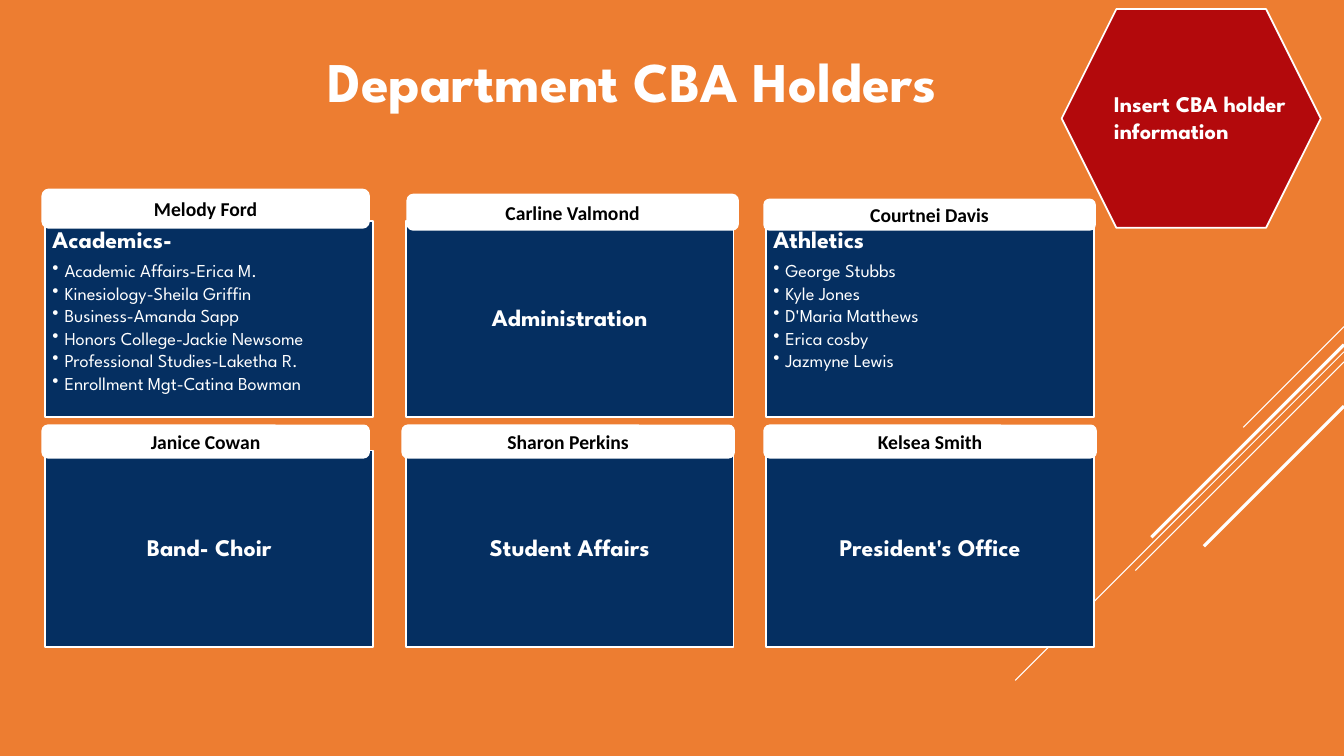
from dataclasses import dataclass

from lxml.etree import SubElement
from pptx import Presentation
from pptx.dml.color import RGBColor
from pptx.enum.shapes import MSO_CONNECTOR as Connector, MSO_SHAPE as Shape
from pptx.enum.text import MSO_ANCHOR as Anchor, MSO_AUTO_SIZE as AutoSize, PP_ALIGN as Align
from pptx.oxml.ns import qn
from pptx.util import Inches, Pt


@dataclass(frozen=True)
class Theme:
    orange: RGBColor = RGBColor.from_string("ED7D31")
    navy: RGBColor = RGBColor.from_string("052F61")
    red: RGBColor = RGBColor.from_string("B3090C")
    white: RGBColor = RGBColor.from_string("FFFFFF")
    black: RGBColor = RGBColor.from_string("000000")
    display: str = "League Spartan"
    label: str = "Calibri"
    title_size: int = 40
    department_size: int = 17
    note_size: int = 16
    holder_size: int = 14
    member_size: int = 13
    outline: float = 1.25


THEME = Theme()
SLIDE_WIDTH, SLIDE_HEIGHT = 13.33, 7.5
COLUMNS = 3
CARD_LEFT, CARD_TOP, CARD_WIDTH, CARD_HEIGHT = 0.45, 2.19, 3.25, 1.95
COLUMN_STEP, ROW_STEP = 3.575, 2.28

DEPARTMENTS = [
    ("Academics-", [
        "Academic Affairs-Erica M.",
        "Kinesiology-Sheila Griffin",
        "Business-Amanda Sapp",
        "Honors College-Jackie Newsome",
        "Professional Studies-Laketha R.",
        "Enrollment Mgt-Catina Bowman",
    ]),
    ("Administration", []),
    ("Athletics", [
        "George Stubbs",
        "Kyle Jones",
        "D'Maria Matthews",
        "Erica cosby",
        "Jazmyne Lewis",
    ]),
    ("Band- Choir", []),
    ("Student Affairs", []),
    ("President's Office", []),
]

HOLDERS = [
    ("Melody Ford", (0.42, 1.88, 3.24, 0.38)),
    ("Carline Valmond", (4.04, 1.93, 3.28, 0.35)),
    ("Courtnei Davis", (7.58, 1.98, 3.28, 0.3)),
    ("Janice Cowan", (0.42, 4.22, 3.24, 0.32)),
    ("Sharon Perkins", (3.99, 4.22, 3.29, 0.32)),
    ("Kelsea Smith", (7.58, 4.22, 3.29, 0.32)),
]

STREAKS = [(3.24, 1, 0.75), (3.49, 3.26, 0.75), (3.59, 2.07, 0.75), (3.42, 1.91, 2.25), (4.03, 1.39, 2.25)]


def assign(target, formats):
    for name, value in formats.items():
        setattr(target, name, value)


def add_streak(slide, start_y, run, weight):
    streak = slide.shapes.add_connector(
        Connector.STRAIGHT, Inches(SLIDE_WIDTH), Inches(start_y),
        Inches(SLIDE_WIDTH - run), Inches(start_y + run))
    streak.line.color.rgb = THEME.white
    streak.line.width = Pt(weight)
    SubElement(streak.element.spPr, qn("a:effectLst"))


def add_panel(slide, preset, box, fill):
    panel = slide.shapes.add_shape(preset, *map(Inches, box))
    panel.shadow.inherit = False
    panel.fill.solid()
    panel.fill.fore_color.rgb = fill
    panel.line.color.rgb = THEME.white
    panel.line.width = Pt(THEME.outline)
    return panel


def write(paragraph, text, size, color=THEME.white, font=THEME.display, bold=True, **layout):
    run = paragraph.add_run()
    run.text = text
    assign(run.font, {"name": font, "size": Pt(size), "bold": bold})
    run.font.color.rgb = color
    assign(paragraph, layout)


def add_bullet(paragraph):
    properties = paragraph._p.get_or_add_pPr()
    properties.set("marL", str(Inches(0.12)))
    properties.set("indent", str(-Inches(0.12)))
    SubElement(properties, qn("a:buChar")).set("char", "•")


def add_department(slide, box, department, members):
    frame = add_panel(slide, Shape.RECTANGLE, box, THEME.navy).text_frame
    sides = ("margin_left", "margin_top", "margin_right", "margin_bottom")
    assign(frame, dict.fromkeys(sides, Inches(0.07)))
    assign(frame, {"word_wrap": True, "vertical_anchor": Anchor.TOP if members else Anchor.MIDDLE})
    write(frame.paragraphs[0], department, THEME.department_size,
          alignment=Align.LEFT if members else Align.CENTER, line_spacing=0.9, space_after=Pt(6))
    for member in members:
        paragraph = frame.add_paragraph()
        write(paragraph, member, THEME.member_size, bold=False,
              alignment=Align.LEFT, level=1, line_spacing=0.9, space_after=Pt(2))
        add_bullet(paragraph)


def add_holder(slide, holder, box):
    frame = add_panel(slide, Shape.ROUNDED_RECTANGLE, box, THEME.white).text_frame
    assign(frame, {"word_wrap": True, "vertical_anchor": Anchor.MIDDLE})
    write(frame.paragraphs[0], holder, THEME.holder_size, THEME.black, THEME.label, alignment=Align.CENTER)


def add_caption(slide, box, text, size):
    frame = slide.shapes.add_textbox(*map(Inches, box)).text_frame
    assign(frame, {"word_wrap": True, "auto_size": AutoSize.SHAPE_TO_FIT_TEXT})
    write(frame.paragraphs[0], text, size)


def main():
    deck = Presentation()
    assign(deck, {"slide_width": Inches(SLIDE_WIDTH), "slide_height": Inches(SLIDE_HEIGHT)})
    slide = deck.slides.add_slide(deck.slide_layouts[6])
    slide.background.fill.solid()
    slide.background.fill.fore_color.rgb = THEME.orange

    for streak in STREAKS:
        add_streak(slide, *streak)
    add_panel(slide, Shape.HEXAGON, (10.53, 0.09, 2.57, 2.17), THEME.red)
    for index, (department, members) in enumerate(DEPARTMENTS):
        row, column = divmod(index, COLUMNS)
        box = (CARD_LEFT + column * COLUMN_STEP, CARD_TOP + row * ROW_STEP, CARD_WIDTH, CARD_HEIGHT)
        add_department(slide, box, department, members)
    for holder, box in HOLDERS:
        add_holder(slide, holder, box)
    add_caption(slide, (3.15, 0.41, 7.04, 0.77), "Department CBA Holders", THEME.title_size)
    add_caption(slide, (10.95, 0.85, 2.48, 0.64), "Insert CBA holder information", THEME.note_size)

    deck.save("out.pptx")


if __name__ == "__main__":
    main()
